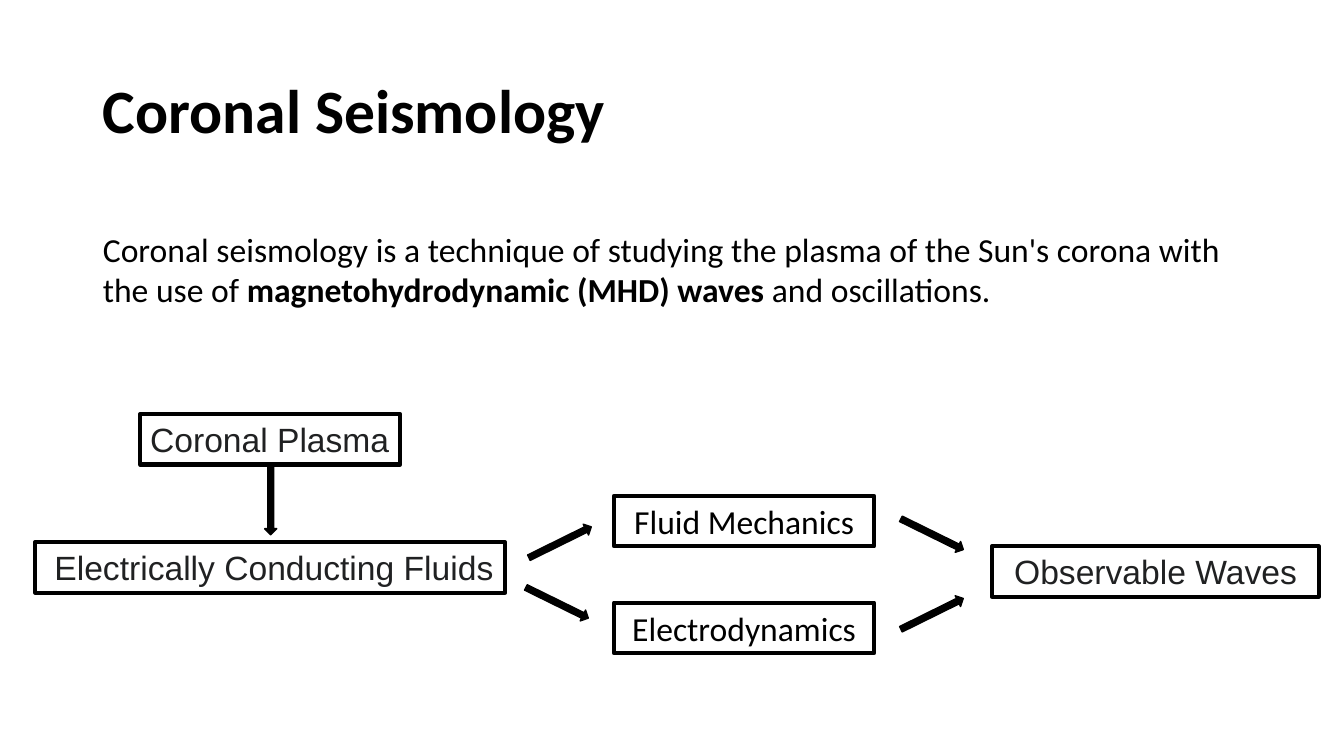
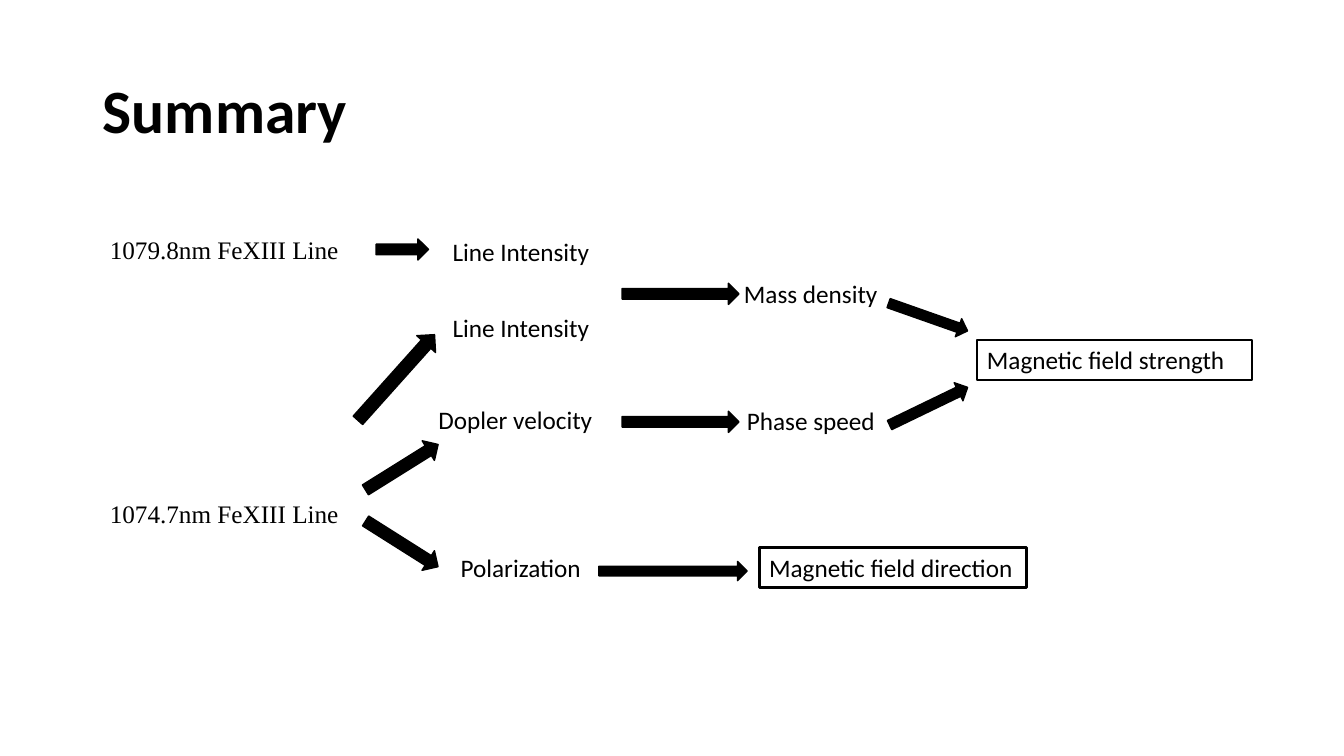
from pptx import Presentation
from pptx.dml.color import RGBColor
from pptx.enum.shapes import MSO_SHAPE as SHAPE
from pptx.enum.text import MSO_ANCHOR as ANCHOR, PP_ALIGN as ALIGN
from pptx.oxml.ns import qn
from pptx.util import Pt
from lxml.etree import SubElement

PX = 9144
BLACK = RGBColor(0, 0, 0)
WHITE = RGBColor(255, 255, 255)
CHARCOAL = RGBColor(0x20, 0x21, 0x22)

TITLE = dict(name="Calibri", size=Pt(44), bold=True)
BODY = dict(name="Calibri", size=Pt(24))
ARIAL = dict(name="Arial", size=Pt(24), color=CHARCOAL)
LABEL = dict(name="Calibri", size=Pt(18))
SERIF = dict(name="Times New Roman", size=Pt(18))


def px(*lengths):
    return [round(n * PX) for n in lengths]


def format_font(font, style):
    values = dict(style)
    font.color.rgb = values.pop("color", BLACK)
    for key, value in values.items():
        setattr(font, key, value)


def place(sp, x, y, w, h):
    sp.left, sp.top, sp.width, sp.height = px(x, y, w, h)


def add_run(p, text, style):
    r = p.add_run()
    r.text = text
    format_font(r.font, style)


def set_margins(tf, left=10, right=10):
    tf.margin_left, tf.margin_top, tf.margin_right, tf.margin_bottom = px(left, 5, right, 5)


def add_title(s, text):
    sp = s.shapes.title
    place(sp, 92, 40, 1150, 145)
    tf = sp.text_frame
    tf.vertical_anchor = ANCHOR.MIDDLE
    set_margins(tf)
    p = tf.paragraphs[0]
    p.alignment, p.line_spacing = ALIGN.LEFT, 0.9
    add_run(p, text, TITLE)


def add_body(s, box, runs):
    sp = s.placeholders[1]
    place(sp, *box)
    set_margins(sp.text_frame)
    p = sp.text_frame.paragraphs[0]
    pPr = p._p.get_or_add_pPr()
    pPr.set("marL", "0")
    pPr.set("indent", "0")
    SubElement(pPr, qn("a:buNone"))
    p.space_before = Pt(0)
    for text, bold in runs:
        add_run(p, text, dict(BODY, bold=bold))


def add_label(s, text, x, y, w, h, style, border=0, fill=None, align=ALIGN.LEFT, inset=10):
    if border:
        sp = s.shapes.add_shape(SHAPE.RECTANGLE, *px(x, y, w, h))
        sp.shadow.inherit = False
        sp.line.color.rgb = BLACK
        sp.line.width = Pt(border)
        if fill is None:
            sp.fill.background()
        else:
            sp.fill.solid()
            sp.fill.fore_color.rgb = fill
    else:
        sp = s.shapes.add_textbox(*px(x, y, w, h))
    tf = sp.text_frame
    tf.word_wrap = True
    tf.vertical_anchor = ANCHOR.TOP
    set_margins(tf, inset, 0 if align == ALIGN.LEFT else inset)
    p = tf.paragraphs[0]
    p.alignment = align
    add_run(p, text, style)


def add_arrow(s, x, y, w, h, angle):
    sp = s.shapes.add_shape(SHAPE.RIGHT_ARROW, *px(x, y, w, h))
    sp.shadow.inherit = False
    sp.fill.solid()
    sp.fill.fore_color.rgb = sp.line.color.rgb = BLACK
    sp.line.width = Pt(1)
    sp.rotation = angle


def add_wave_flow(s, left, top):
    boxes = [
        ("Coronal Plasma", 104, 0, 258, ARIAL, ALIGN.LEFT, 10),
        ("Electrically Conducting Fluids", 0, 127, 466, ARIAL, ALIGN.LEFT, 19),
        ("Fluid Mechanics", 574, 81, 258, BODY, ALIGN.CENTER, 10),
        ("Electrodynamics", 574, 187, 258, BODY, ALIGN.CENTER, 10),
        ("Observable Waves", 949, 131, 324, ARIAL, ALIGN.CENTER, 10),
    ]
    for text, x, y, w, style, align, inset in boxes:
        add_label(s, text, left + x, top + y, w, 50, style, 3, WHITE, align, inset)
    arrows = [(199, 79, 90), (486, 121, 333.7), (483, 181, 26.2),
              (855, 192, 333.7), (855, 113, 26.2)]
    for x, y, angle in arrows:
        add_arrow(s, left + x, top + y, 69, 12, angle)


def add_field_flow(s, left, top):
    labels = [
        ("1079.8nm FeXIII Line", 0, 0, 249, SERIF, 0),
        ("1074.7nm FeXIII Line", 0, 261, 249, SERIF, 0),
        ("Line Intensity", 340, 2, 157, LABEL, 0),
        ("Line Intensity", 340, 77, 157, LABEL, 0),
        ("Dopler velocity", 326, 168, 175, LABEL, 0),
        ("Polarization", 348, 315, 141, LABEL, 0),
        ("Mass density", 629, 43, 192, LABEL, 0),
        ("Phase speed", 632, 169, 149, LABEL, 0),
        ("Magnetic field strength", 870, 109, 273, LABEL, 1.5),
        ("Magnetic field direction", 654, 315, 265, LABEL, 2.25),
    ]
    for text, x, y, w, style, border in labels:
        add_label(s, text, left + x, top + y, w, 40, style, border)
    arrows = [
        (274, 9, 52, 21, 0),
        (237, 134, 114, 25, 311.8),
        (257, 224, 85, 23, 328),
        (257, 300, 85, 23, 32.3),
        (518, 53, 116, 21, 0),
        (518, 180, 116, 21, 0),
        (495, 329, 147, 19, 0),
        (780, 77, 83, 19, 19.4),
        (779, 165, 86, 20, 334.2),
    ]
    for x, y, w, h, angle in arrows:
        add_arrow(s, left + x, top + y, w, h, angle)


def seismology_slide(prs):
    s = prs.slides.add_slide(prs.slide_layouts[1])
    add_title(s, "Coronal Seismology")
    add_body(s, (92, 222, 1150, 91), [
        ("Coronal seismology is a technique of studying the plasma of the Sun's corona "
         "with the use of ", False),
        ("magnetohydrodynamic (MHD) waves", True),
        (" and oscillations.", False),
    ])
    add_wave_flow(s, 35, 411)


def summary_slide(prs):
    s = prs.slides.add_slide(prs.slide_layouts[5])
    add_title(s, "Summary")
    add_field_flow(s, 99, 228)


def main():
    prs = Presentation()
    prs.slide_width, prs.slide_height = px(1333, 750)
    seismology_slide(prs)
    summary_slide(prs)
    prs.save("out.pptx")


if __name__ == "__main__":
    main()
